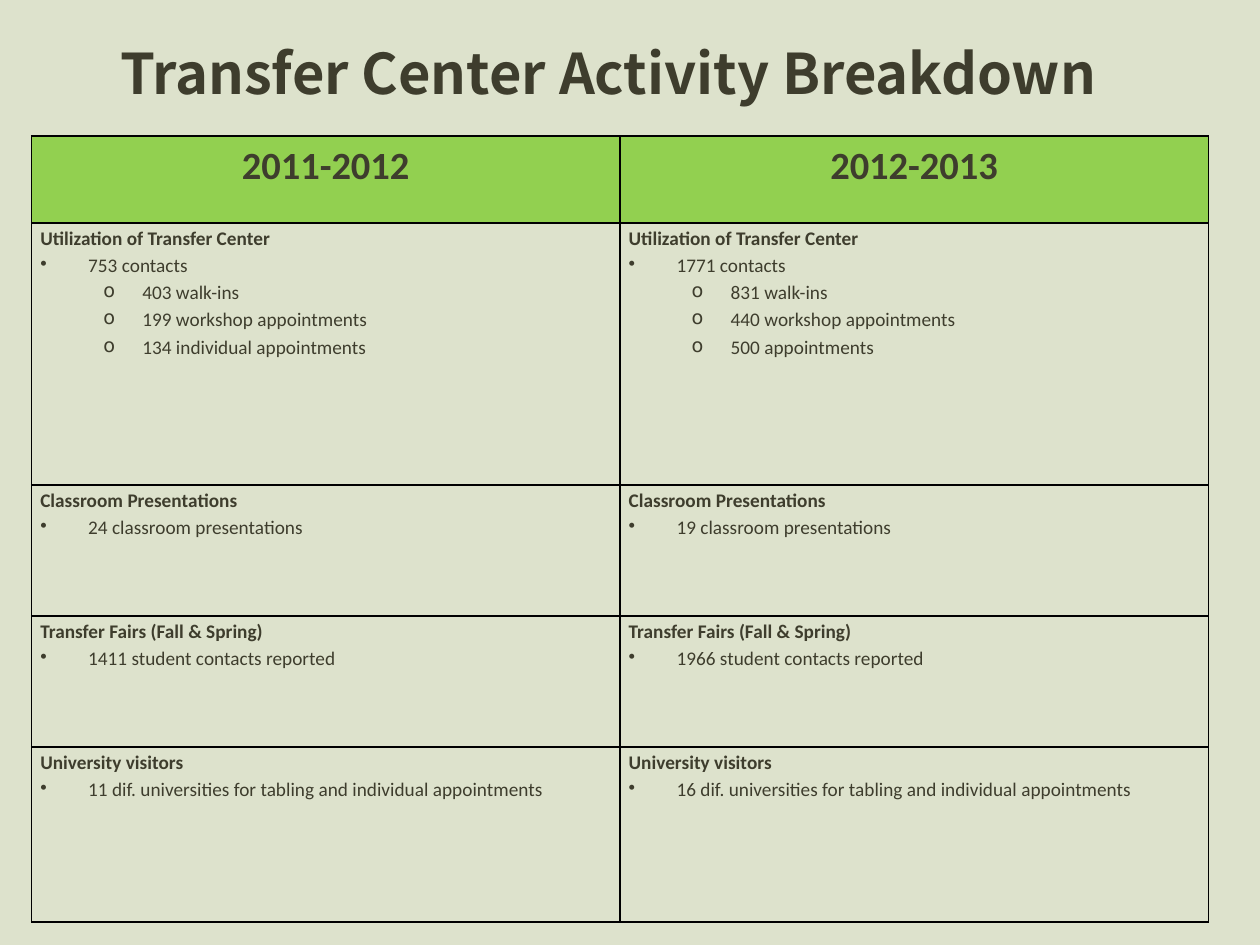
"""Build the Transfer Center activity slide comparing two academic years."""
from dataclasses import dataclass

from lxml import etree
from pptx import Presentation
from pptx.dml.color import RGBColor
from pptx.enum.text import MSO_ANCHOR, MSO_AUTO_SIZE, PP_ALIGN
from pptx.oxml.ns import qn
from pptx.table import _Cell
from pptx.text.text import _Paragraph
from pptx.util import Inches, Pt

LEFT, CENTER = PP_ALIGN.LEFT, PP_ALIGN.CENTER
TOP, MIDDLE = MSO_ANCHOR.TOP, MSO_ANCHOR.MIDDLE
NO_AUTOFIT = MSO_AUTO_SIZE.NONE

PAGE = RGBColor(0xDD, 0xE2, 0xCC)
INK = RGBColor(0x3E, 0x3D, 0x2D)
HEADER_GREEN = RGBColor(0x92, 0xD0, 0x50)
BORDER = RGBColor(0x00, 0x00, 0x00)

BODY_FONT, TITLE_FONT = "Calibri", "Noto Sans CJK KR"
TITLE_ONLY = 5
COLUMN_WIDTH = 4.67
ROW_HEIGHTS = (0.69, 2.08, 1.04, 1.04, 1.39)
YEARS = ("2011-2012", "2012-2013")


@dataclass(frozen=True)
class Bullet:
    mark: str
    margin: float
    hanging: float
    level: int = 0


@dataclass(frozen=True)
class Activity:
    heading: str
    totals: tuple[str, str]
    details: tuple[tuple[str, ...], tuple[str, ...]] = ((), ())


TOTAL = Bullet("•", 0.38, 0.38)
DETAIL = Bullet("o", 0.81, 0.31, level=1)

ACTIVITIES = (
    Activity(
        "Utilization of Transfer Center",
        ("753 contacts", "1771 contacts"),
        (
            ("403 walk-ins", "199 workshop appointments", "134 individual appointments"),
            ("831 walk-ins", "440 workshop appointments", "500 appointments"),
        ),
    ),
    Activity(
        "Classroom Presentations",
        ("24 classroom presentations", "19 classroom presentations"),
    ),
    Activity(
        "Transfer Fairs (Fall & Spring)",
        ("1411 student contacts reported", "1966 student contacts reported"),
    ),
    Activity(
        "University visitors",
        (
            "11 dif. universities for tabling and individual appointments",
            "16 dif. universities for tabling and individual appointments",
        ),
    ),
)


def write(paragraph: _Paragraph, text: str, *, size: float = 11, bold: bool = False,
          font: str = BODY_FONT, align: PP_ALIGN = LEFT, spacing: float = 1.15,
          bullet: Bullet | None = None) -> None:
    run = paragraph.add_run()
    run.text = text
    run.font.name, run.font.size, run.font.bold = font, Pt(size), bold
    run.font.color.rgb = INK
    paragraph.alignment, paragraph.line_spacing = align, spacing
    if bullet:
        paragraph.level = bullet.level
        properties = paragraph._p.get_or_add_pPr()
        properties.set("marL", str(Inches(bullet.margin)))
        properties.set("indent", str(-Inches(bullet.hanging)))
        etree.SubElement(properties, qn("a:buChar"), char=bullet.mark)


def prepare_cell(cell: _Cell, fill: RGBColor | None = None) -> None:
    cell.margin_left = cell.margin_right = Inches(0.07)
    cell.margin_top = cell.margin_bottom = 0
    cell.vertical_anchor = TOP
    if fill is None:
        cell.fill.background()
    else:
        cell.fill.solid()
        cell.fill.fore_color.rgb = fill
    properties = cell._tc.get_or_add_tcPr()
    for position, side in enumerate(("lnL", "lnR", "lnT", "lnB")):
        edge = etree.Element(qn(f"a:{side}"), w=str(Pt(1)))
        stroke = etree.SubElement(edge, qn("a:solidFill"))
        etree.SubElement(stroke, qn("a:srgbClr"), val=str(BORDER))
        properties.insert(position, edge)


def fill_activity(cell: _Cell, activity: Activity, year: int) -> None:
    prepare_cell(cell)
    frame = cell.text_frame
    write(frame.paragraphs[0], activity.heading, bold=True)
    write(frame.add_paragraph(), activity.totals[year], bullet=TOTAL)
    for detail in activity.details[year]:
        write(frame.add_paragraph(), detail, bullet=DETAIL)


def main() -> None:
    deck = Presentation()
    deck.slide_width, deck.slide_height = Inches(10), Inches(7.5)
    slide = deck.slides.add_slide(deck.slide_layouts[TITLE_ONLY])
    slide.background.fill.solid()
    slide.background.fill.fore_color.rgb = PAGE

    title = slide.shapes.title
    title.left, title.top = Inches(0.58), Inches(0.25)
    title.width, title.height = Inches(8.5), Inches(0.64)
    title.text_frame.auto_size = NO_AUTOFIT
    title.text_frame.vertical_anchor = MIDDLE
    write(title.text_frame.paragraphs[0], "Transfer Center Activity Breakdown",
          size=32, bold=True, font=TITLE_FONT, align=CENTER, spacing=1.0)

    breakdown = slide.shapes.add_table(
        len(ROW_HEIGHTS), len(YEARS), Inches(0.25), Inches(1.08),
        Inches(COLUMN_WIDTH * len(YEARS)), Inches(sum(ROW_HEIGHTS))).table
    breakdown.horz_banding = False
    for row, height in zip(breakdown.rows, ROW_HEIGHTS):
        row.height = Inches(height)
    for column, year in enumerate(YEARS):
        breakdown.columns[column].width = Inches(COLUMN_WIDTH)
        header = breakdown.cell(0, column)
        prepare_cell(header, HEADER_GREEN)
        write(header.text_frame.paragraphs[0], year, size=22, bold=True, align=CENTER)
        for row_number, activity in enumerate(ACTIVITIES, start=1):
            fill_activity(breakdown.cell(row_number, column), activity, column)

    deck.save("out.pptx")


if __name__ == "__main__":
    main()
